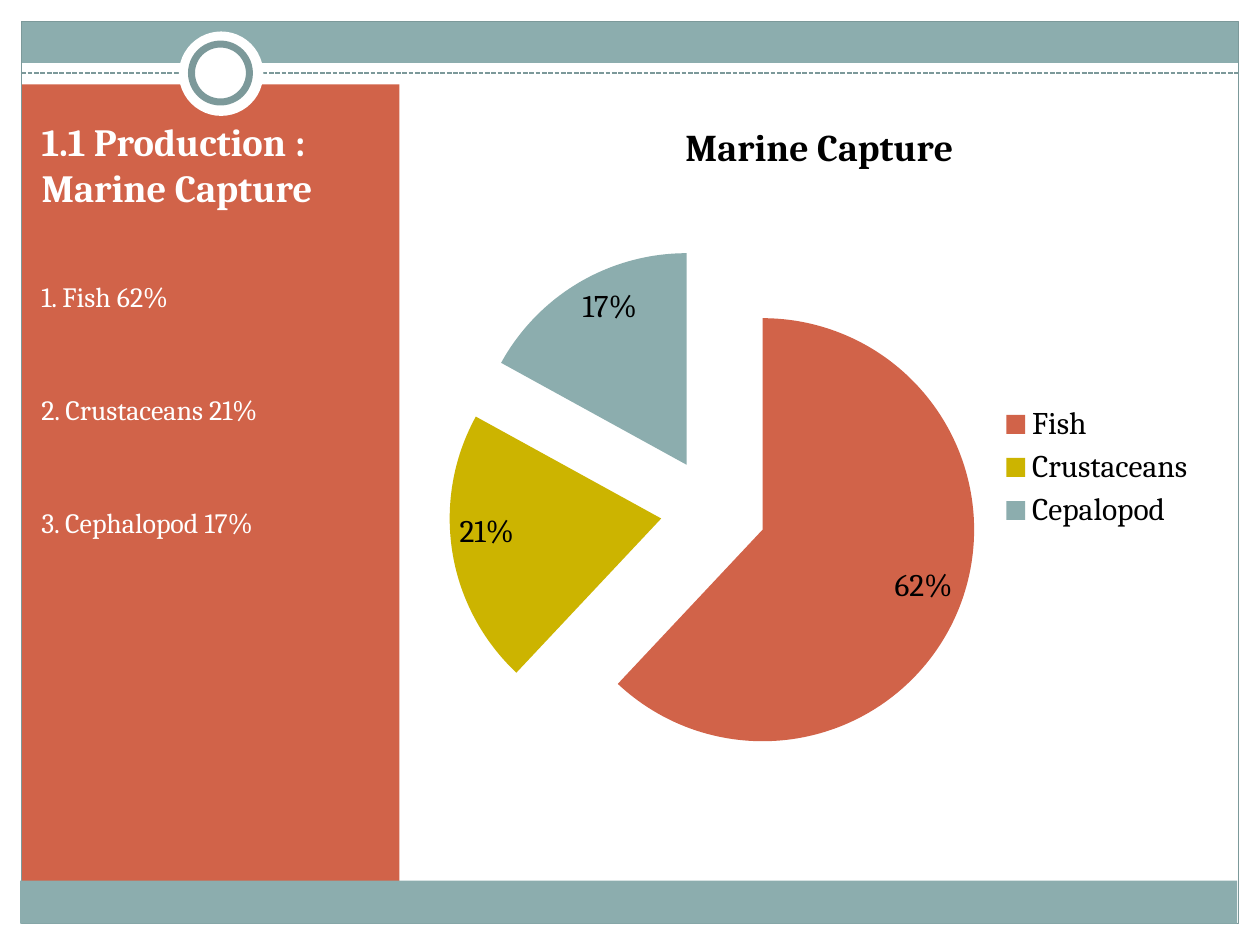
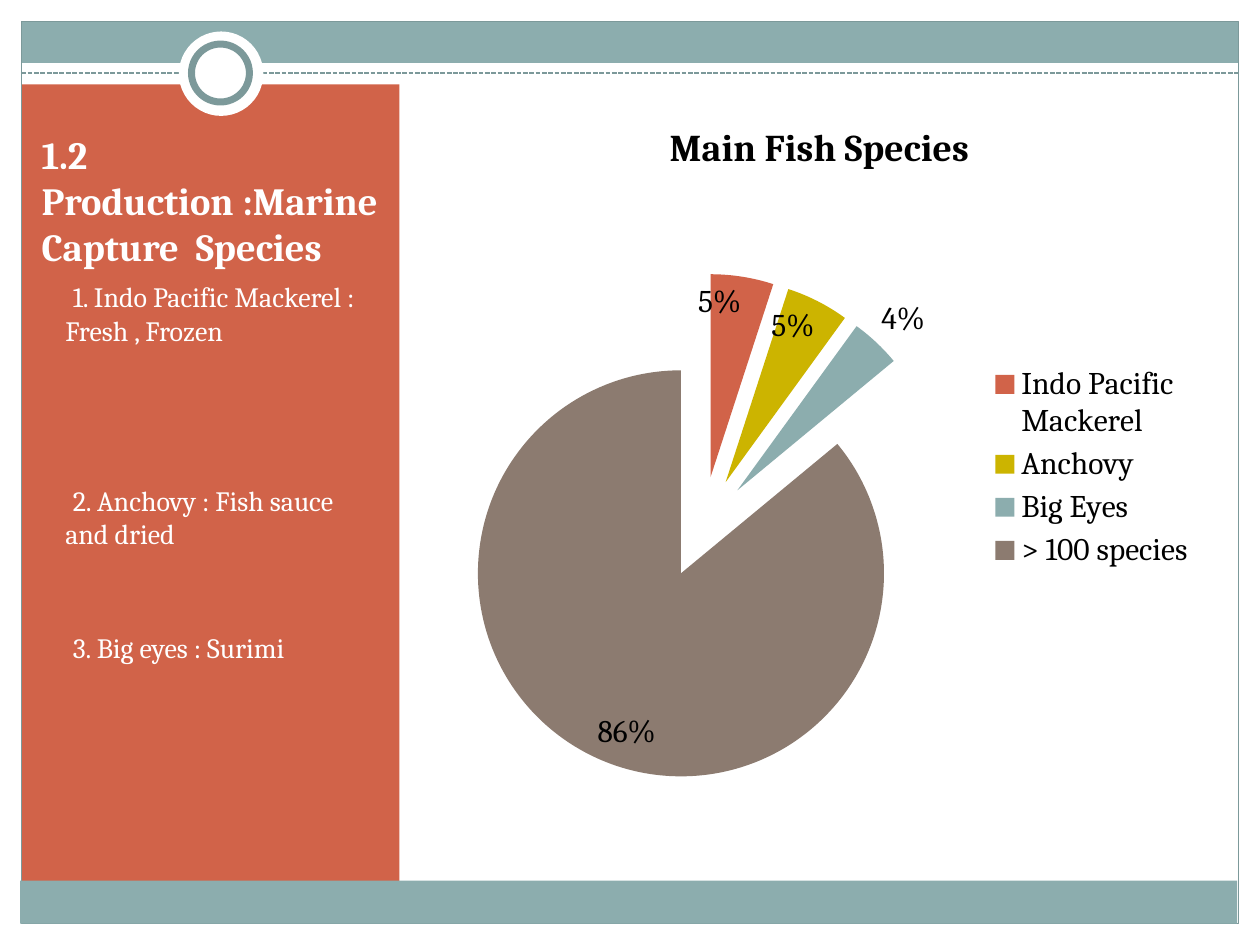
import pptx
import pptx.chart.data
import pptx.dml.color
import pptx.enum.chart
import pptx.enum.dml
import pptx.enum.shapes
import pptx.enum.text
import pptx.util
from lxml import etree
from pptx.oxml.ns import qn
from pptx.util import Inches, Pt

FONT = "Cambria"
COLORS = {
    "white": "FFFFFF",
    "black": "000000",
    "teal": "8CADAE",
    "dark_teal": "7C999A",
    "rust": "D16349",
    "mustard": "CCB400",
    "taupe": "8C7B70",
}
SLICE_COLORS = ["rust", "mustard", "teal", "taupe"]
EXPLOSION = 25

# Boxes are left, top, width, height in inches
FRAME = (0.17, 0.17, 9.66, 7.16)
CHART_BOX = (3.42, 0.75, 6.17, 5.92)

# Body items are (text, space before in points); plot is x, y, size in inches
SLIDES = [
    {
        "title": "1.1 Production : Marine Capture",
        "title_box": (0.23, 0.7, 2.77, 1.02),
        "items": [("1. Fish 62%", 0), ("2. Crustaceans 21%", 45.5),
                  ("3. Cephalopod 17%", 45.5)],
        "items_box": (0.23, 2.17, 2.77, 2.76),
        "first_indent": 0,
        "chart_title": "Marine Capture",
        "series": "Marine Capture",
        "shares": {"Fish": 62, "Crustaceans": 21, "Cepalopod": 17},
        "plot": (0.14, 1.2, 4.2),
        "outside": [],
    },
    {
        "title": "1.2 Production :Marine Capture  Species",
        "title_box": (0.23, 0.78, 2.89, 1.41),
        "items": [("1. Indo Pacific Mackerel : Fresh , Frozen", 0),
                  ("2. Anchovy : Fish sauce and dried", 78),
                  ("3. Big eyes : Surimi", 45.5)],
        "items_box": (0.42, 2.17, 2.58, 4.53),
        "first_indent": 0.06,
        "chart_title": "Main Fish Species",
        "series": "Series 1",
        "shares": {"Indo Pacific Mackerel": 5, "Anchovy": 5, "Big Eyes": 4,
                   "> 100 species": 86},
        "plot": (0.14, 1.42, 4.03),
        "outside": [2],
    },
]


def rgb(color):
    return pptx.dml.color.RGBColor.from_string(COLORS[color])


def inches(box):
    return [Inches(length) for length in box]


def format_font(font, size, color="black", bold=False):
    font.name = FONT
    font.size = Pt(size)
    font.bold = bold
    font.color.rgb = rgb(color)


def write(frame, text, size=16, color="white", bold=False, before=0, indent=0,
          new=False):
    """Write one paragraph into a text frame."""
    paragraph = frame.add_paragraph() if new else frame.paragraphs[0]
    paragraph.alignment = pptx.enum.text.PP_ALIGN.LEFT
    paragraph.space_before = Pt(before)
    if indent:
        paragraph._p.get_or_add_pPr().set("indent", str(Inches(indent)))
    run = paragraph.add_run()
    run.text = text
    format_font(run.font, size, color, bold)


def add_block(slide, box, fill=None, line=None, width=0.75, kind="RECTANGLE"):
    block = slide.shapes.add_shape(
        getattr(pptx.enum.shapes.MSO_SHAPE, kind), *inches(box))
    block.shadow.inherit = False
    if fill:
        block.fill.solid()
        block.fill.fore_color.rgb = rgb(fill)
    else:
        block.fill.background()
    if line:
        block.line.color.rgb = rgb(line)
        block.line.width = Pt(width)
    else:
        block.line.fill.background()


def add_backdrop(slide, box):
    """Bands, side panel, frame, dashed rule and ring, placed in the frame box."""
    left, top, width, height = box
    add_block(slide, (left, top, width, 0.33), fill="teal")
    add_block(slide, (left, top + 0.5, 3, 6.42), fill="rust")
    add_block(slide, box, line="dark_teal")

    rule_y = top + 0.41
    rule = slide.shapes.add_connector(
        pptx.enum.shapes.MSO_CONNECTOR.STRAIGHT,
        *inches((left, rule_y, left + width, rule_y)))
    rule.line.color.rgb = rgb("dark_teal")
    rule.line.width = Pt(0.9)
    rule.line.dash_style = pptx.enum.dml.MSO_LINE.SQUARE_DOT
    etree.SubElement(rule._element.spPr, qn("a:effectLst"))

    add_block(slide, (left + 1.25, top + 0.08, 0.67, 0.67), fill="white", kind="OVAL")
    add_block(slide, (left + 1.35, top + 0.18, 0.46, 0.46), fill="white",
              line="dark_teal", width=4, kind="OVAL")
    add_block(slide, (left - 0.01, top + height - 0.34, width, 0.34), fill="teal")


def add_title(slide, box, text):
    title = slide.shapes.title
    title.left, title.top, title.width, title.height = inches(box)
    frame = title.text_frame
    frame.word_wrap = True
    frame.auto_size = pptx.enum.text.MSO_AUTO_SIZE.NONE
    frame.vertical_anchor = pptx.enum.text.MSO_ANCHOR.BOTTOM
    write(frame, text, size=22, bold=True)
    # Bring the title in front of the side panel
    title._element.getparent().append(title._element)


def add_items(slide, box, items, first_indent):
    frame = slide.shapes.add_textbox(*inches(box)).text_frame
    frame.word_wrap = True
    for number, (text, before) in enumerate(items):
        write(frame, text, before=before, indent=first_indent, new=number > 0)


def place_plot(chart, box, plot):
    """Fix the plot's square inside the chart box."""
    x, y, size = plot
    fractions = {"x": x / box[2], "y": y / box[3],
                 "w": size / box[2], "h": size / box[3]}
    plot_area = chart._chartSpace.find(".//" + qn("c:plotArea"))
    for old in plot_area.findall(qn("c:layout")):
        plot_area.remove(old)
    layout = etree.Element(qn("c:layout"))
    manual = etree.SubElement(layout, qn("c:manualLayout"))
    settings = [("layoutTarget", "inner"), ("xMode", "edge"), ("yMode", "edge")]
    settings += [(key, f"{value:.3f}") for key, value in fractions.items()]
    for tag, value in settings:
        etree.SubElement(manual, qn("c:" + tag)).set("val", value)
    plot_area.insert(0, layout)


def add_pie(slide, box, content):
    shares = content["shares"]
    data = pptx.chart.data.CategoryChartData(number_format='0"%"')
    data.categories = list(shares)
    data.add_series(content["series"], list(shares.values()))
    chart = slide.shapes.add_chart(
        pptx.enum.chart.XL_CHART_TYPE.PIE, *inches(box), data).chart
    format_font(chart.font, 18)

    # Title and legend
    chart.has_title = True
    write(chart.chart_title.text_frame, content["chart_title"], size=21.6,
          color="black", bold=True)
    chart.chart_title.include_in_layout = False
    chart.has_legend = True
    chart.legend.position = pptx.enum.chart.XL_LEGEND_POSITION.RIGHT
    chart.legend.include_in_layout = False
    format_font(chart.legend.font, 18)

    # Slices
    chart.plots[0].vary_by_categories = True
    series = chart.plots[0].series[0]
    for index, color in enumerate(SLICE_COLORS[:len(shares)]):
        fill = series.points[index].format.fill
        fill.solid()
        fill.fore_color.rgb = rgb(color)
    explosion = etree.Element(qn("c:explosion"))
    explosion.set("val", str(EXPLOSION))
    series._element.find(qn("c:dPt")).addprevious(explosion)

    # Value labels
    position = pptx.enum.chart.XL_LABEL_POSITION
    labels = series.data_labels
    labels.show_value = True
    labels.number_format = '0"%"'
    labels.number_format_is_linked = False
    labels.position = position.INSIDE_END
    format_font(labels.font, 18)
    for index in content["outside"]:
        label = series.points[index].data_label
        label.position = position.OUTSIDE_END
        format_font(label.font, 18)

    place_plot(chart, box, content["plot"])


def add_production_slide(deck, content):
    slide = deck.slides.add_slide(deck.slide_layouts[5])
    add_backdrop(slide, FRAME)
    add_title(slide, content["title_box"], content["title"])
    add_items(slide, content["items_box"], content["items"], content["first_indent"])
    add_pie(slide, CHART_BOX, content)


def main():
    deck = pptx.Presentation()
    deck.slide_width, deck.slide_height = Inches(10), Inches(7.5)
    for content in SLIDES:
        add_production_slide(deck, content)
    deck.save("out.pptx")


if __name__ == "__main__":
    main()
